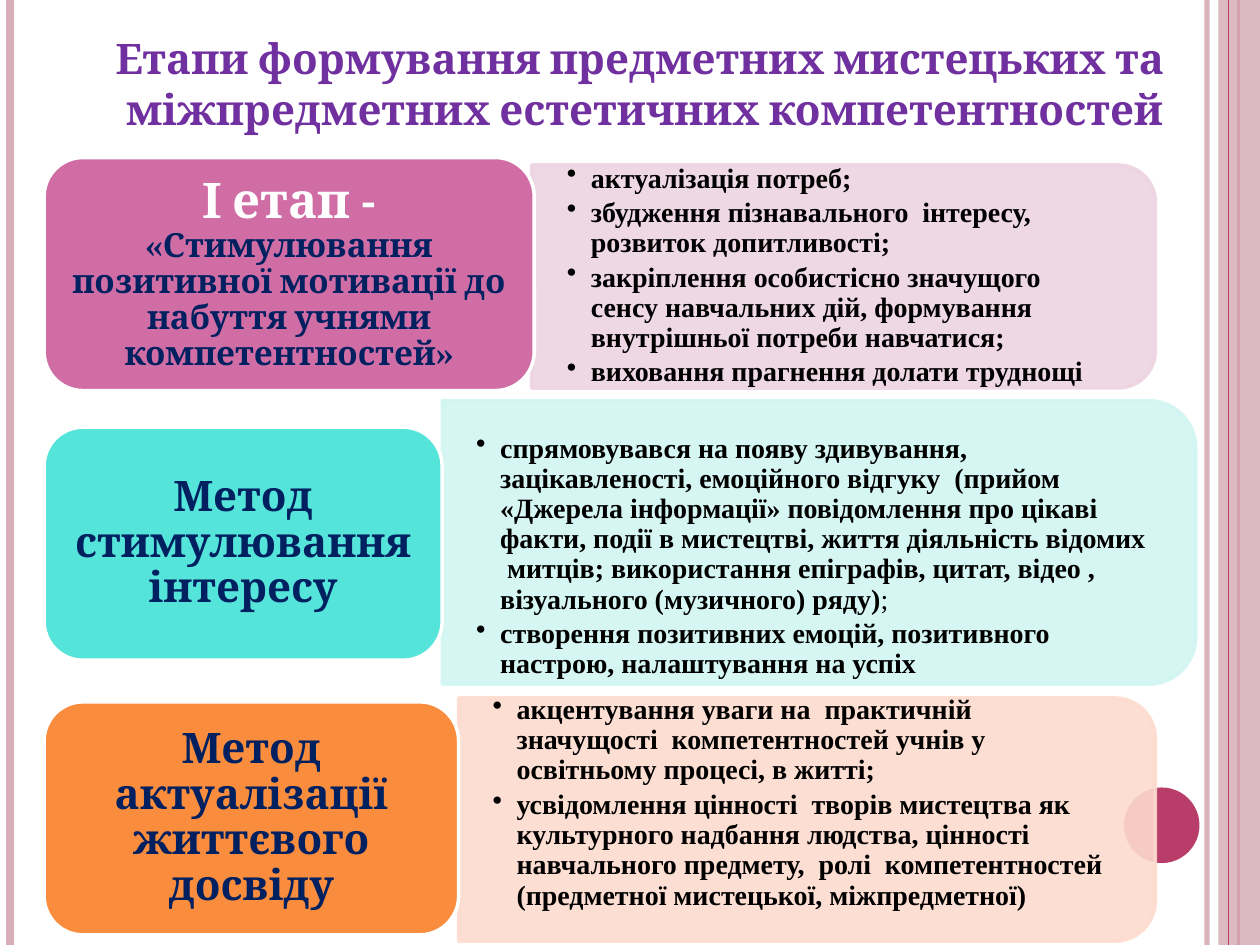
from dataclasses import dataclass

from lxml import etree
from pptx import Presentation
from pptx.dml.color import RGBColor
from pptx.enum.shapes import MSO_CONNECTOR, MSO_SHAPE
from pptx.enum.text import MSO_ANCHOR, PP_ALIGN
from pptx.oxml.ns import qn
from pptx.util import Inches, Pt


@dataclass(frozen=True)
class Theme:
    heading_font: str = "Cambria"
    body_font: str = "Times New Roman"
    title: str = "7030A0"
    navy: str = "002060"
    white: str = "FFFFFF"
    black: str = "000000"
    accent: str = "B83D68"
    pale_accent: str = "D8AFB9"
    title_size: int = 24
    stage_size: int = 28
    goal_size: int = 19
    method_size: int = 24
    body_size: int = 16


THEME = Theme()
TITLE_LINES = ["Етапи формування предметних мистецьких та ",
               "міжпредметних естетичних компетентностей"]

# Each box is left, top, width, height; insets are left, top, right, bottom.
ROWS = [
    dict(
        card_box=(0.35, 1.25, 3.89, 1.85), card_color="CF6DA4",
        card_insets=(0.12, 0.06, 0.12, 0.06),
        label=[("І етап - ", THEME.stage_size, THEME.white),
               ("«Стимулювання позитивної мотивації до набуття учнями компетентностей»",
                THEME.goal_size, THEME.navy)],
        panel_box=(4.22, 1.31, 4.95, 1.77), panel_color="EDD4E0",
        text_box=(4.23, 1.39, 4.86, 1.6), text_insets=(0.27, 0.14, 0.27, 0.14),
        bullets=[["актуалізація потреб;"],
                 ["збудження пізнавального  інтересу, розвиток допитливості;"],
                 ["закріплення особистісно значущого сенсу навчальних дій, "
                  "формування внутрішньої потреби навчатися;"],
                 ["виховання прагнення долати труднощі"]],
    ),
    dict(
        card_box=(0.35, 3.39, 3.16, 1.85), card_color="55E4DA",
        card_insets=(0.1, 0.05, 0.1, 0.05),
        label=[("Метод стимулювання інтересу", THEME.method_size, THEME.navy)],
        panel_box=(3.51, 3.18, 5.98, 2.25), panel_color="D1F6F2",
        text_box=(3.51, 3.29, 5.87, 2.03), text_insets=(0.27, 0.37, 0.27, 0.14),
        bullets=[["спрямовувався на появу здивування, зацікавленості, емоційного відгуку  "
                  "(прийом «Джерела інформації» повідомлення про цікаві  факти, події в "
                  "мистецтві, життя діяльність відомих  митців; використання епіграфів, "
                  "цитат, відео , візуального (музичного) ряду)", ";"],
                 ["створення позитивних емоцій, позитивного настрою, налаштування на успіх"]],
    ),
    dict(
        card_box=(0.35, 5.57, 3.29, 1.85), card_color="FA8D3D",
        card_insets=(0.1, 0.05, 0.1, 0.05),
        label=[("Метод актуалізації життєвого досвіду", THEME.method_size, THEME.navy)],
        panel_box=(3.64, 5.54, 5.53, 1.93), panel_color="FDDBCE",
        text_box=(3.64, 5.63, 5.43, 1.74), text_insets=(0.27, 0.14, 0.27, 0.39),
        bullets=[["акцентування уваги на  практичній значущості  компетентностей учнів "
                  "у освітньому процесі, в житті;"],
                 ["усвідомлення цінності  творів мистецтва як культурного надбання людства, "
                  "цінності навчального предмету,  ролі  компетентностей "
                  "(предметної мистецької, міжпредметної)"]],
    ),
]


def set_opacity(owner, percent):
    """Make every solid colour inside the element partly transparent."""
    for color in owner.iter(qn("a:srgbClr")):
        etree.SubElement(color, qn("a:alpha")).set("val", str(percent * 1000))


def add_box_shape(slide, kind, box, color, outline=None):
    shape = slide.shapes.add_shape(kind, *map(Inches, box))
    shape.shadow.inherit = False
    shape.fill.solid()
    shape.fill.fore_color.rgb = RGBColor.from_string(color)
    if outline:
        shape.line.color.rgb = RGBColor.from_string(outline)
        shape.line.width = Pt(2)
    else:
        shape.line.fill.background()
    return shape


def add_vertical_rule(slide, left, width, color, opacity=100):
    rule = slide.shapes.add_connector(
        MSO_CONNECTOR.STRAIGHT, Inches(left), 0, Inches(left), Inches(7.5))
    rule.line.width = Pt(width)
    rule.line.color.rgb = RGBColor.from_string(color)
    properties = rule.element.spPr
    if opacity < 100:
        set_opacity(properties, opacity)
    etree.SubElement(properties, qn("a:effectLst"))


def add_run(paragraph, text, font, size, color, bold=True):
    run = paragraph.add_run()
    run.text = text
    run.font.name = font
    run.font.size = Pt(size)
    run.font.bold = bold
    run.font.color.rgb = RGBColor.from_string(color)


def prepare_frame(shape, insets, anchor=MSO_ANCHOR.MIDDLE):
    frame = shape.text_frame
    frame.word_wrap = True
    frame.vertical_anchor = anchor
    (frame.margin_left, frame.margin_top,
     frame.margin_right, frame.margin_bottom) = map(Inches, insets)
    return frame


def next_paragraph(frame, index):
    return frame.add_paragraph() if index else frame.paragraphs[0]


def add_bullet(paragraph):
    properties = paragraph._p.get_or_add_pPr()
    properties.set("marL", str(Inches(0.19)))
    properties.set("indent", str(-Inches(0.19)))
    etree.SubElement(properties, qn("a:buChar")).set("char", "•")


def add_decoration(slide):
    add_vertical_rule(slide, 9.58, 3, THEME.pale_accent, 93)
    add_vertical_rule(slide, 0.08, 4.5, THEME.pale_accent)
    add_vertical_rule(slide, 9.83, 1.5, THEME.accent)
    band = add_box_shape(slide, MSO_SHAPE.RECTANGLE, (9.67, 0, 0.33, 7.5), THEME.pale_accent)
    set_opacity(band.element.spPr, 87)
    add_vertical_rule(slide, 9.75, 0.75, THEME.accent)
    add_box_shape(slide, MSO_SHAPE.OVAL, (8.92, 6.25, 0.6, 0.6), THEME.accent)


def add_title(slide, box):
    text_box = slide.shapes.add_textbox(*map(Inches, box))
    frame = prepare_frame(text_box, (0.1, 0.05, 0.1, 0.05), MSO_ANCHOR.TOP)
    for index, line in enumerate(TITLE_LINES):
        paragraph = next_paragraph(frame, index)
        paragraph.alignment = PP_ALIGN.CENTER
        add_run(paragraph, line, THEME.heading_font, THEME.title_size, THEME.title)


def add_panel(slide, box, color):
    """Add a panel rounded on its right side: a top-rounded shape turned by 90 degrees."""
    left, top, width, height = box
    shift = (width - height) / 2
    panel = add_box_shape(slide, MSO_SHAPE.ROUND_2_SAME_RECTANGLE,
                          (left + shift, top - shift, height, width), color, color)
    panel.rotation = 90
    set_opacity(panel.element.spPr, 90)


def add_bullet_text(slide, box, insets, bullets):
    frame = prepare_frame(slide.shapes.add_textbox(*map(Inches, box)), insets)
    for index, parts in enumerate(bullets):
        paragraph = next_paragraph(frame, index)
        paragraph.line_spacing = 0.9
        paragraph.space_after = Pt(2.4)
        add_bullet(paragraph)
        for part in parts:
            add_run(paragraph, part, THEME.body_font, THEME.body_size, THEME.black,
                    bold=part != ";")


def add_card(slide, box, color, insets, label):
    card = add_box_shape(slide, MSO_SHAPE.ROUNDED_RECTANGLE, box, color, THEME.white)
    paragraph = prepare_frame(card, insets).paragraphs[0]
    paragraph.alignment = PP_ALIGN.CENTER
    paragraph.line_spacing = 0.9
    for text, size, text_color in label:
        add_run(paragraph, text, THEME.heading_font, size, text_color)


def main():
    presentation = Presentation()
    presentation.slide_width, presentation.slide_height = Inches(10), Inches(7.5)
    slide = presentation.slides.add_slide(presentation.slide_layouts[6])
    add_decoration(slide)
    for row in ROWS:
        add_panel(slide, row["panel_box"], row["panel_color"])
        add_bullet_text(slide, row["text_box"], row["text_insets"], row["bullets"])
        add_card(slide, row["card_box"], row["card_color"], row["card_insets"], row["label"])
    add_title(slide, (0.51, 0.21, 9.21, 0.91))
    presentation.save("out.pptx")


if __name__ == "__main__":
    main()
